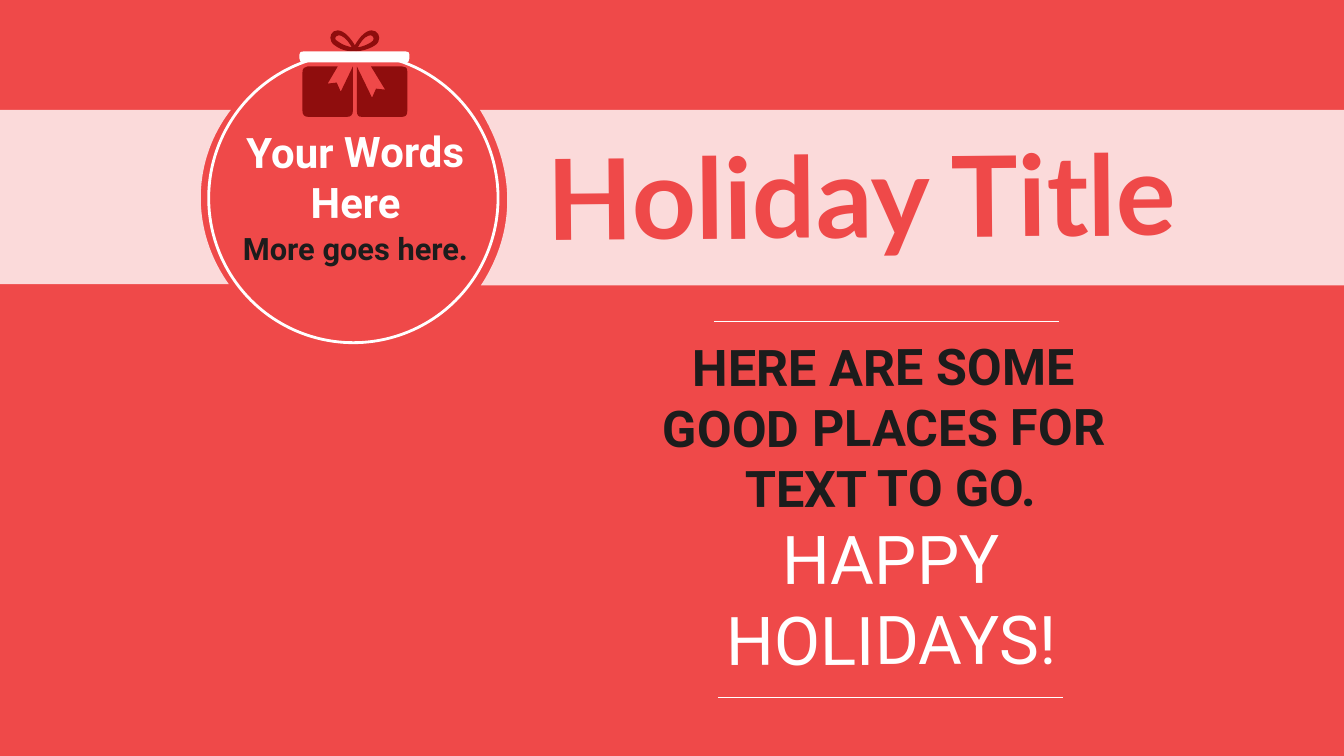
from dataclasses import dataclass

from lxml.etree import SubElement
from pptx import Presentation
from pptx.dml.color import RGBColor
from pptx.enum.shapes import MSO_CONNECTOR as Connector, MSO_SHAPE as Shape
from pptx.enum.text import MSO_ANCHOR as Anchor, MSO_AUTO_SIZE as AutoSize, PP_ALIGN as Align
from pptx.oxml.ns import qn
from pptx.util import Inches, Pt


@dataclass(frozen=True)
class Theme:
    red: str = "EF4949"
    dark_red: str = "8F0D0D"
    white: str = "FFFFFF"
    ink: str = "1C1C1C"
    title_font: str = "Lato"
    text_font: str = "Roboto"
    title_size: int = 80
    greeting_size: int = 48
    message_size: int = 36
    badge_size: int = 30
    note_size: int = 22
    band_opacity: int = 80


class Card:
    def __init__(self, slide, theme):
        self.slide = slide
        self.theme = theme
        self.shapes = slide.shapes
        self.paint(slide.background.fill, theme.red)

    def paint(self, fill, color):
        fill.solid()
        fill.fore_color.rgb = RGBColor.from_string(color)

    def outline(self, contours, color, opacity=100):
        builder = None
        for start, *segments in contours:
            corner = tuple(map(Inches, start))
            if builder is None:
                builder = self.shapes.build_freeform(*corner, scale=1.0)
            else:
                builder.move_to(*corner)
            numbers = [Inches(number) for segment in segments for number in segment]
            builder.add_line_segments(list(zip(numbers[::2], numbers[1::2])), close=True)
        shape = builder.convert_to_shape()
        self.bend(shape, contours)
        self.finish(shape, color)
        if opacity < 100:
            tint = shape.element.spPr.find(qn("a:solidFill"))[0]
            SubElement(tint, qn("a:alpha"), val=str(opacity * 1000))

    def bend(self, shape, contours):
        lines = iter(list(shape.element.iter(qn("a:lnTo"))))
        for segment in (part for contour in contours for part in contour[1:]):
            first, *others = [next(lines) for _ in segment[::2]]
            if others:
                curve = first.makeelement(qn("a:cubicBezTo"))
                first.addprevious(curve)
                for line in (first, *others):
                    curve.append(line[0])
                    line.getparent().remove(line)

    def finish(self, shape, color):
        shape.shadow.inherit = False
        self.paint(shape.fill, color)
        shape.line.fill.background()

    def ring(self, left, top, size, width):
        ring = self.shapes.add_shape(Shape.OVAL, *map(Inches, (left, top, size, size)))
        ring.shadow.inherit = False
        ring.fill.background()
        self.paint(ring.line.fill, self.theme.white)
        ring.line.width = Pt(width)

    def rule(self, left, top, length):
        ends = map(Inches, (left, top, left + length, top))
        rule = self.shapes.add_connector(Connector.STRAIGHT, *ends)
        self.paint(rule.line.fill, self.theme.white)
        rule.line.width = Pt(1)
        SubElement(rule.element.spPr, qn("a:effectLst"))

    def place(self, box, area, rotation):
        box.left, box.top, box.width, box.height = map(Inches, area)
        box.rotation = rotation
        frame = box.text_frame
        frame.word_wrap = True
        frame.auto_size = AutoSize.SHAPE_TO_FIT_TEXT
        frame.vertical_anchor = Anchor.TOP
        return frame

    def style(self, font, name, size, color, bold):
        font.name = name
        font.size = Pt(size)
        font.bold = bold
        self.paint(font.fill, color)

    def title(self, words, area, rotation):
        box = self.slide.shapes.title
        box.element.getparent().append(box.element)
        para = self.place(box, area, rotation).paragraphs[0]
        para.text = words
        para.alignment = Align.CENTER
        self.style(para.font, self.theme.title_font, self.theme.title_size, self.theme.red, True)

    def text(self, paragraphs, area, rotation=0):
        box = self.shapes.add_textbox(0, 0, 0, 0)
        frame = self.place(box, area, rotation)
        for index, spans in enumerate(paragraphs):
            para = frame.paragraphs[0] if index == 0 else frame.add_paragraph()
            para.alignment = Align.CENTER
            for position, (words, *look) in enumerate(spans):
                if position:
                    para.add_line_break()
                span = para.add_run()
                span.text = words
                font = para.font if len(spans) == 1 else span.font
                self.style(font, self.theme.text_font, *look)

    def gift(self, parts):
        self.shapes = self.slide.shapes.add_group_shape().shapes
        for contours, color in parts:
            self.outline(contours, color)
        self.shapes = self.slide.shapes


RIGHT_BAND = [[(13.37, 2.83), (13.35, 1.09), (4.76, 1.09), (5.11, 1.66, 5.13, 2.28, 4.77, 2.83)]]
LEFT_BAND = [[(0, 1.09), (0, 2.82), (2.27, 2.82), (1.88, 2.27, 1.91, 1.58, 2.29, 1.09)]]
GIFT_LEFT = [[
    (3.34, 0.82), (3.25, 0.83), (3.35, 0.66), (3.05, 0.66),
    (3.02, 0.66, 3, 0.68, 3, 0.72), (3, 1.1), (3, 1.14, 3.02, 1.16, 3.06, 1.16),
    (3.44, 1.16), (3.48, 1.16, 3.5, 1.14, 3.5, 1.1), (3.5, 0.66), (3.38, 0.91),
]]
GIFT_RIGHT = [[
    (3.82, 0.89), (3.73, 0.88), (3.69, 0.97), (3.54, 0.66), (3.54, 1.1),
    (3.54, 1.14, 3.55, 1.16, 3.59, 1.16), (3.98, 1.16),
    (4.02, 1.16, 4.04, 1.15, 4.04, 1.1), (4.04, 0.71),
    (4.04, 0.67, 4.02, 0.66, 3.99, 0.66), (3.68, 0.66),
]]
BOW = [
    [(3.52, 0.45), (3.35, 0.16, 3.2, 0.37, 3.32, 0.45), (3.4, 0.51, 3.48, 0.51, 3.51, 0.51),
     (3.61, 0.51, 3.69, 0.47, 3.72, 0.45), (3.84, 0.37, 3.68, 0.16, 3.52, 0.45)],
    [(3.35, 0.41), (3.31, 0.39, 3.32, 0.36, 3.36, 0.35),
     (3.39, 0.35, 3.44, 0.38, 3.49, 0.47), (3.42, 0.45, 3.41, 0.45, 3.35, 0.41)],
    [(3.68, 0.42), (3.63, 0.45, 3.6, 0.46, 3.55, 0.47),
     (3.6, 0.37, 3.65, 0.35, 3.68, 0.35), (3.71, 0.36, 3.72, 0.4, 3.68, 0.42)],
]
CAP = [[
    (4.02, 0.62), (3.02, 0.62), (2.98, 0.62, 2.97, 0.61, 2.97, 0.58), (2.97, 0.54),
    (2.97, 0.52, 2.98, 0.51, 3.02, 0.51), (4.02, 0.51),
    (4.05, 0.51, 4.06, 0.52, 4.06, 0.54), (4.06, 0.58),
    (4.06, 0.61, 4.05, 0.62, 4.02, 0.62),
]]


def main():
    theme = Theme()
    deck = Presentation()
    deck.slide_width, deck.slide_height = Inches(13.33), Inches(7.5)
    card = Card(deck.slides.add_slide(deck.slide_layouts[5]), theme)

    badge = (theme.badge_size, theme.white, True)
    note = (theme.note_size, theme.ink, True)
    message = (theme.message_size, theme.ink, True)
    greeting = (theme.greeting_size, theme.white, False)

    card.ring(2.07, 0.53, 2.87, 2)
    card.outline(RIGHT_BAND, theme.white, theme.band_opacity)
    card.text([[("More goes here.", *note)]], (1.63, 2.23, 3.79, 0.47))
    card.text([[("Your Words", *badge)], [("Here", *badge)]], (1.6, 1.2, 3.85, 1.11), 359.7)
    card.title("Holiday Title", (5.17, 1.2, 6.75, 1.45), 359.5)
    card.text([
        [("HERE ARE SOME ", *message)],
        [("GOOD PLACES FOR ", *message)],
        [("TEXT TO GO.", *message), ("HAPPY", *greeting)],
        [("HOLIDAYS!", *greeting)],
    ], (4.92, 3.28, 7.83, 3.53), 359.7)
    for left, top in ((7.08, 3.19), (7.12, 6.92)):
        card.rule(left, top, 3.42)
    card.outline(LEFT_BAND, theme.white, theme.band_opacity)
    card.gift((
        (GIFT_LEFT, theme.dark_red),
        (GIFT_RIGHT, theme.dark_red),
        (BOW, theme.dark_red),
        (CAP, theme.white),
    ))

    deck.save("out.pptx")


if __name__ == "__main__":
    main()
